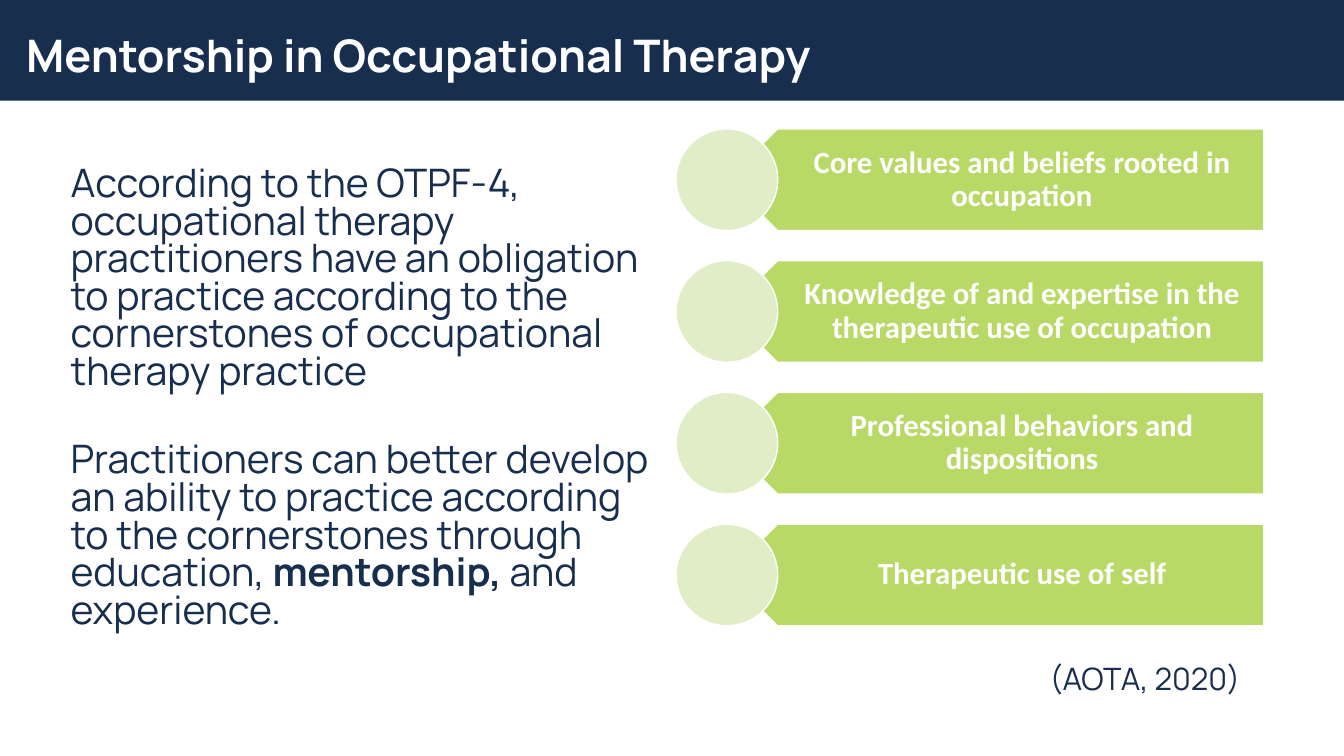
from dataclasses import dataclass
from pptx import Presentation
from pptx import util as u
from pptx.dml import color
from pptx.enum import shapes, text


@dataclass(frozen=True)
class Theme:
    navy: str = "182E4F"
    white: str = "FFFFFF"
    green: str = "B9D966"
    pale: str = "E0EDC6"
    head: str = "Manrope"
    label: str = "Calibri"
    title: float = 32
    body: float = 28
    small: float = 22


T = Theme()
CORNERS = [
    "Core values and beliefs rooted in occupation",
    "Knowledge of and expertise in the therapeutic use of occupation",
    "Professional behaviors and dispositions",
    "Therapeutic use of self",
]
BODY = [
    [("According to the OTPF-4, occupational therapy practitioners have an "
      "obligation to practice according to the cornerstones of occupational "
      "therapy practice", False)],
    [("Practitioners can better develop an ability to practice according to "
      "the cornerstones through education, ", False),
     ("mentorship, ", True), ("and experience.", False)],
]


def apply(item, vals):
    for key, val in vals.items():
        setattr(item, key, val)


def rgb(tone):
    return color.RGBColor.from_string(tone)


def shape(slide, kind, box, fill, line=None, turn=0):
    item = slide.shapes.add_shape(kind, *map(u.Cm, box))
    item.shadow.inherit = False
    item.rotation = turn
    item.fill.solid()
    item.fill.fore_color.rgb = rgb(fill)
    if line:
        item.line.color.rgb = rgb(line)
        item.line.width = u.Pt(1)
    else:
        item.line.fill.background()


def write(slide, box, paras, font, size, tone, frame=None, **form):
    area = slide.shapes.add_textbox(*map(u.Cm, box)).text_frame
    apply(area, {"word_wrap": True, "auto_size": text.MSO_AUTO_SIZE.NONE,
                 **(frame or {})})
    gap = form.pop("gap", 0)
    for num, runs in enumerate(paras):
        para = area.add_paragraph() if num else area.paragraphs[0]
        apply(para, {"space_before": u.Pt(gap if num else 0), **form})
        for words, bold in runs:
            run = para.add_run()
            run.text = words
            apply(run.font, {"name": font, "size": u.Pt(size), "bold": bold})
            run.font.color.rgb = rgb(tone)


def corner(slide, top, words):
    high = 2.56
    shape(slide, shapes.MSO_SHAPE.PENTAGON, (18.31, top, 13.54, high),
          T.green, T.white, 180)
    write(slide, (18.96, top, 12.9, high), [[(words, True)]],
          T.label, T.small, T.white,
          {"vertical_anchor": text.MSO_ANCHOR.MIDDLE,
           "margin_left": u.Cm(1.12), "margin_right": u.Cm(0.43)},
          alignment=text.PP_ALIGN.CENTER, line_spacing=0.9)
    shape(slide, shapes.MSO_SHAPE.OVAL, (17.04, top, high, high),
          T.pale, T.white)


def main():
    deck = Presentation()
    apply(deck, {"slide_width": u.Cm(33.87), "slide_height": u.Cm(19.05)})
    slide = deck.slides.add_slide(deck.slide_layouts[6])
    shape(slide, shapes.MSO_SHAPE.RECTANGLE, (0, 0, 33.87, 2.54), T.navy)
    write(slide, (0.41, 0.38, 29.21, 2.16),
          [[("Mentorship in Occupational Therapy", True)]],
          T.head, T.title, T.white,
          {"vertical_anchor": text.MSO_ANCHOR.MIDDLE}, line_spacing=0.9)
    write(slide, (1.53, 4.09, 15.42, 13.06), BODY, T.head, T.body, T.navy,
          line_spacing=0.8, gap=36)
    write(slide, (26.2, 16.61, 6.5, 1.12), [[("(AOTA, 2020)", False)]],
          T.head, T.small, T.navy, line_spacing=0.9)
    for num, words in enumerate(CORNERS):
        corner(slide, 3.25 + 3.32 * num, words)
    deck.save("out.pptx")


if __name__ == "__main__":
    main()
